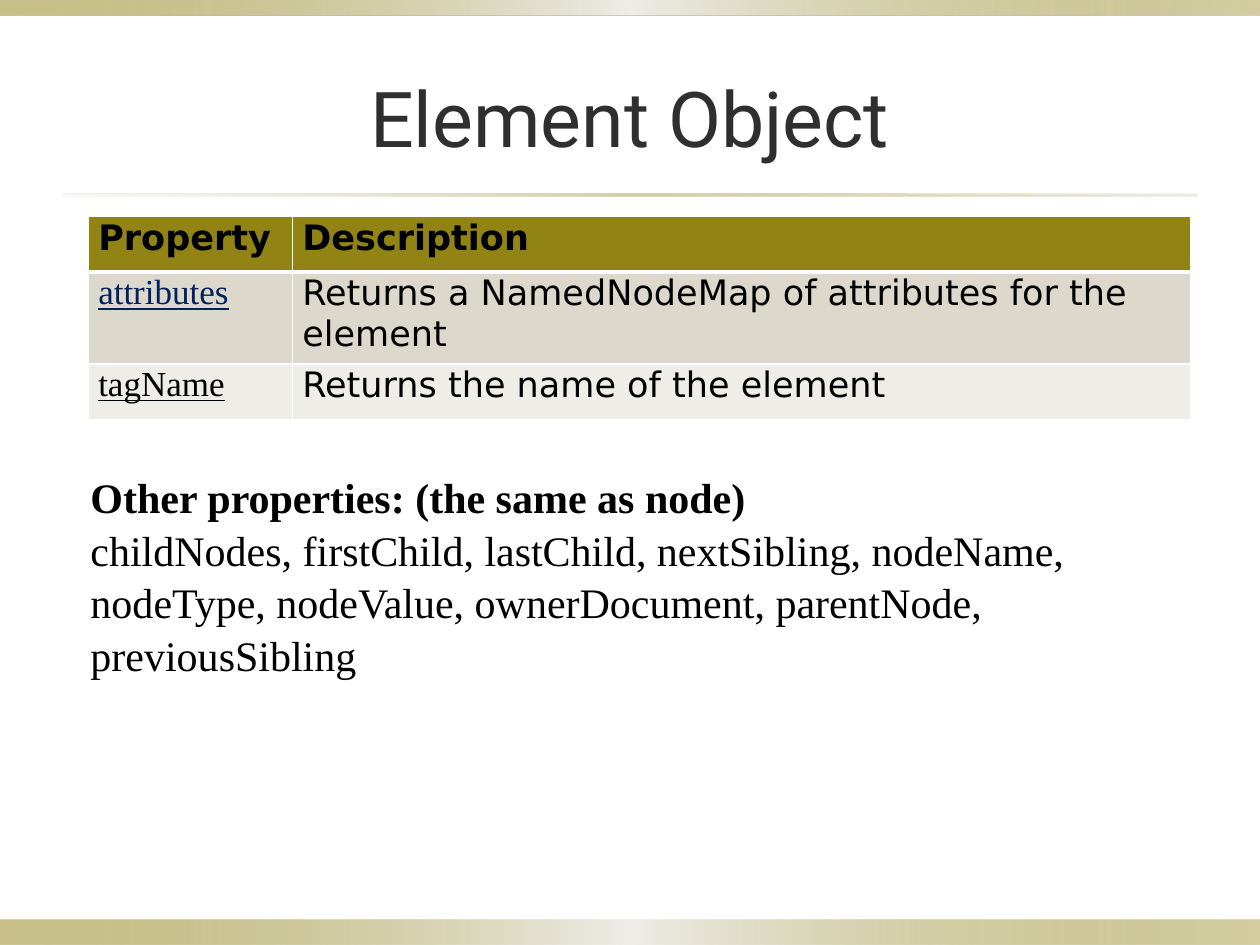
from dataclasses import dataclass

from lxml.etree import SubElement
from pptx import Presentation
from pptx.dml.color import RGBColor
from pptx.enum.shapes import MSO_SHAPE
from pptx.enum.text import MSO_ANCHOR, PP_ALIGN
from pptx.oxml.ns import qn
from pptx.util import Inches, Pt


@dataclass(frozen=True)
class Theme:
    olive: str = "918415"
    sand: str = "DCD9CC"
    pale: str = "EEEDE8"
    white: str = "FFFFFF"
    title: str = "2F2F2F"
    text: str = "000000"
    link: str = "002060"
    title_font: str = "Roboto"
    table_font: str = "DejaVu Sans"
    body_font: str = "Times New Roman"
    title_size: int = 44
    table_size: int = 20
    body_size: int = 24


@dataclass(frozen=True)
class Bar:
    left: float
    top: float
    width: float
    height: float
    stops: tuple  # (position %, colour, opacity %)


@dataclass(frozen=True)
class Property:
    name: str
    description: str
    color: str
    fill: str


T = Theme()
BAND = ((0, T.olive, 50), (50, T.pale, 100), (100, T.olive, 40))
RULE = ((0, T.sand, 20), (50, T.olive, 40), (100, T.sand, 50))
BARS = (
    Bar(0, 7.3, 10, 0.2, BAND),
    Bar(0, 0, 10, 0.12, BAND),
    Bar(0.5, 1.54, 9, 0.02, RULE),
)
PROPERTIES = (
    Property("attributes", "Returns a NamedNodeMap of attributes for the element",
             T.link, T.sand),
    Property("tagName", "Returns the name of the element", T.text, T.pale),
)
COLUMNS = (1.62, 7.13)
ROWS = (0.44, 0.73, 0.44)
OTHER = (
    ("Other properties: (the same as node)", True),
    ("childNodes, firstChild, lastChild, nextSibling, nodeName, nodeType, "
     "nodeValue, ownerDocument, parentNode, previousSibling", False),
)


def add_run(p, text: str, font: str, size: int, color: str,
            bold: bool = False, underline: bool = False) -> None:
    r = p.add_run()
    r.text = text
    r.font.name, r.font.size = font, Pt(size)
    r.font.bold, r.font.underline = bold, underline
    r.font.color.rgb = RGBColor.from_string(color)


def add_bar(s, bar: Bar) -> None:
    sp = s.shapes.add_shape(MSO_SHAPE.RECTANGLE, Inches(bar.left), Inches(bar.top),
                            Inches(bar.width), Inches(bar.height))
    sp.shadow.inherit = False
    sp.line.fill.background()
    sp.fill.gradient()
    sp.fill.gradient_angle = 0
    # Three stops with opacity replace the default pair
    stops = sp.fill._fill._gradFill.find(qn("a:gsLst"))
    for stop in list(stops):
        stops.remove(stop)
    for position, color, opacity in bar.stops:
        stop = SubElement(stops, qn("a:gs"), pos=str(position * 1000))
        clr = SubElement(stop, qn("a:srgbClr"), val=color)
        SubElement(clr, qn("a:alpha"), val=str(opacity * 1000))


def set_borders(cell, bottom: int) -> None:
    tc_pr = cell._tc.get_or_add_tcPr()
    for i, (side, width) in enumerate((("L", 1), ("R", 1), ("T", 1), ("B", bottom))):
        ln = tc_pr.makeelement(qn(f"a:ln{side}"), {"w": str(Pt(width))})
        tc_pr.insert(i, ln)
        SubElement(SubElement(ln, qn("a:solidFill")), qn("a:srgbClr"), val=T.white)


def fill_cell(cell, text: str, fill: str, font: str, color: str = T.text,
              header: bool = False, underline: bool = False) -> None:
    cell.margin_left, cell.margin_right = Inches(0.08), Inches(0.01)
    cell.margin_top, cell.margin_bottom = Inches(0.01), 0
    cell.vertical_anchor = MSO_ANCHOR.TOP
    cell.fill.solid()
    cell.fill.fore_color.rgb = RGBColor.from_string(fill)
    set_borders(cell, 3 if header else 1)
    add_run(cell.text_frame.paragraphs[0], text, font, T.table_size, color,
            header, underline)


def add_property_table(s) -> None:
    table = s.shapes.add_table(len(ROWS), len(COLUMNS), Inches(0.7), Inches(1.72),
                               Inches(sum(COLUMNS)), Inches(sum(ROWS))).table
    for column, width in zip(table.columns, COLUMNS):
        column.width = Inches(width)
    for row, height in zip(table.rows, ROWS):
        row.height = Inches(height)
    for i, heading in enumerate(("Property", "Description")):
        fill_cell(table.cell(0, i), heading, T.olive, T.table_font, header=True)
    for i, prop in enumerate(PROPERTIES, 1):
        fill_cell(table.cell(i, 0), prop.name, prop.fill, T.body_font, prop.color,
                  underline=True)
        fill_cell(table.cell(i, 1), prop.description, prop.fill, T.table_font)


def add_title(s, text: str) -> None:
    sp = s.shapes.title
    sp.left, sp.top = Inches(0.5), Inches(0.3)
    sp.width, sp.height = Inches(9), Inches(1.25)
    tf = sp.text_frame
    tf.vertical_anchor = MSO_ANCHOR.MIDDLE
    p = tf.paragraphs[0]
    p.alignment = PP_ALIGN.CENTER
    add_run(p, text, T.title_font, T.title_size, T.title)


def add_other_properties(s) -> None:
    tf = s.shapes.add_textbox(Inches(0.62), Inches(3.67),
                              Inches(8.83), Inches(1.88)).text_frame
    tf.word_wrap = True
    for i, (text, bold) in enumerate(OTHER):
        p = tf.add_paragraph() if i else tf.paragraphs[0]
        p.line_spacing = 1.05
        add_run(p, text, T.body_font, T.body_size, T.text, bold)


def main() -> None:
    prs = Presentation()
    prs.slide_width, prs.slide_height = Inches(10), Inches(7.5)
    s = prs.slides.add_slide(prs.slide_layouts[5])
    # Top and bottom bands, rule under the title
    for bar in BARS:
        add_bar(s, bar)
    # Content
    add_title(s, "Element Object")
    add_other_properties(s)
    add_property_table(s)
    prs.save("out.pptx")


if __name__ == "__main__":
    main()
